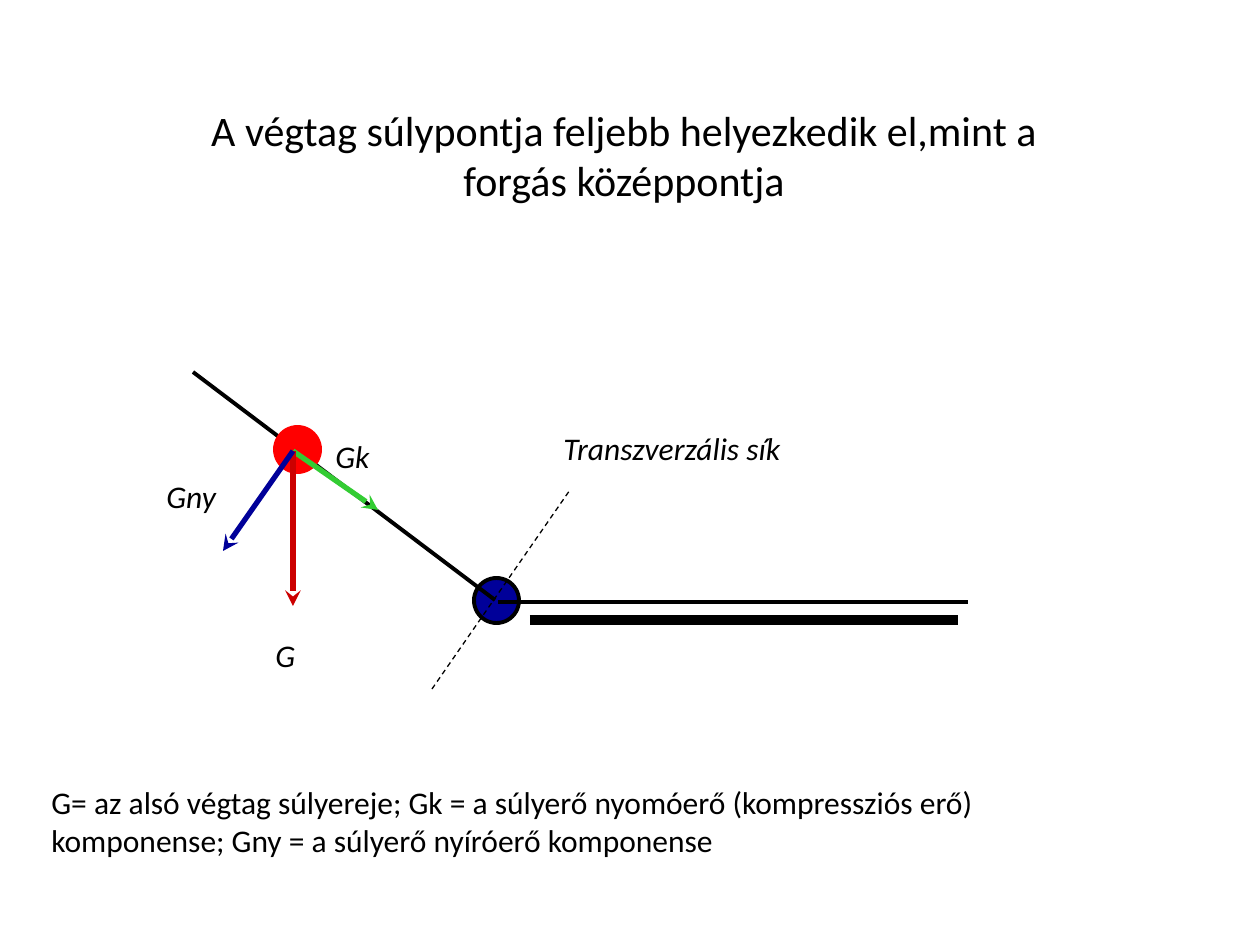
import pptx
import pptx.util
import pptx.dml.color
import pptx.enum.dml
import pptx.enum.shapes
import pptx.enum.text
import pptx.oxml.ns
from lxml import etree

SCALE = 914400 / 126
FONT = "Calibri"
BLACK, BLUE, RED = "000000", "000099", "FF0000"


def px(num):
    return pptx.util.Emu(round(num * SCALE))


def color(code):
    return pptx.dml.color.RGBColor.from_string(code)


def sub(node, tag, **attrs):
    return etree.SubElement(node, pptx.oxml.ns.qn(tag), **attrs)


def add_line(shapes, start, end, code, width, dash=False, arrow=False):
    line = shapes.add_connector(
        pptx.enum.shapes.MSO_CONNECTOR.STRAIGHT,
        *[px(num) for num in start + end])
    line.line.color.rgb = color(code)
    line.line.width = pptx.util.Pt(width)
    if dash:
        line.line.dash_style = pptx.enum.dml.MSO_LINE.DASH
    if arrow:
        sub(line.line._get_or_add_ln(), "a:tailEnd", type="stealth")
    sub(line._element.spPr, "a:effectLst")


def add_disc(shapes, left, top, fill, edge):
    size = px(45)
    disc = shapes.add_shape(
        pptx.enum.shapes.MSO_SHAPE.OVAL, px(left), px(top), size, size)
    disc.shadow.inherit = False
    disc.fill.solid()
    disc.fill.fore_color.rgb = color(fill)
    disc.line.color.rgb = color(edge)
    disc.line.width = pptx.util.Pt(2.25)


def set_text(shape, text, size, italic=False, center=False, wrap=True):
    frame = shape.text_frame
    frame.word_wrap = wrap
    frame.auto_size = pptx.enum.text.MSO_AUTO_SIZE.SHAPE_TO_FIT_TEXT
    frame.vertical_anchor = pptx.enum.text.MSO_ANCHOR.TOP
    para = frame.paragraphs[0]
    align = pptx.enum.text.PP_ALIGN
    para.alignment = align.CENTER if center else align.LEFT
    run = para.add_run()
    run.text = text
    run.font.name = FONT
    run.font.size = pptx.util.Pt(size)
    run.font.italic = italic
    run.font.color.rgb = color(BLACK)


def add_title(slide, text, left, top, width, height):
    title = slide.shapes.title
    title.left, title.top = px(left), px(top)
    title.width, title.height = px(width), px(height)
    set_text(title, text, 24, center=True)


def add_text(slide, text, left, top, width, height=55, **style):
    box = slide.shapes.add_textbox(px(left), px(top), px(width), px(height))
    set_text(box, text, 18, **style)


def add_limb(slide):
    """Draw the table, the trunk and the raised limb as one group."""
    limb = slide.shapes.add_group_shape().shapes
    add_line(limb, (530, 620), (958, 620), BLACK, 6)
    add_disc(limb, 474, 578, BLUE, BLACK)
    add_line(limb, (495, 600), (193, 372), BLACK, 2.25)
    add_line(limb, (968, 602), (498, 602), BLACK, 2.25)
    add_disc(limb, 275, 427, RED, RED)


def main():
    deck = pptx.Presentation()
    deck.slide_width, deck.slide_height = px(1260), px(945)
    slide = deck.slides.add_slide(deck.slide_layouts[5])
    add_title(slide, "A végtag súlypontja feljebb helyezkedik el,mint a "
              "forgás középpontja", 186, 98, 876, 115)

    add_limb(slide)
    center = (293, 451)
    for end, code in [((378, 510), "33CC33"), ((293, 606), "CC0000"),
                      ((223, 551), BLUE)]:
        add_line(slide.shapes, center, end, code, 3, arrow=True)
    add_line(slide.shapes, (432, 689), (570, 490), BLACK, 0.75, dash=True)

    add_text(slide, "Transzverzális sík", 551, 423, 292,
             italic=True, wrap=False)
    for text, left, top, width in [("G", 263, 630, 79), ("Gny", 154, 471, 118),
                                   ("Gk", 323, 431, 89)]:
        add_text(slide, text, left, top, width, italic=True)
    add_text(slide, "G= az alsó végtag súlyereje; Gk = a súlyerő nyomóerő "
             "(kompressziós erő) komponense; Gny = a súlyerő nyíróerő "
             "komponense", 39, 777, 1092, 97)
    deck.save("out.pptx")


if __name__ == "__main__":
    main()
